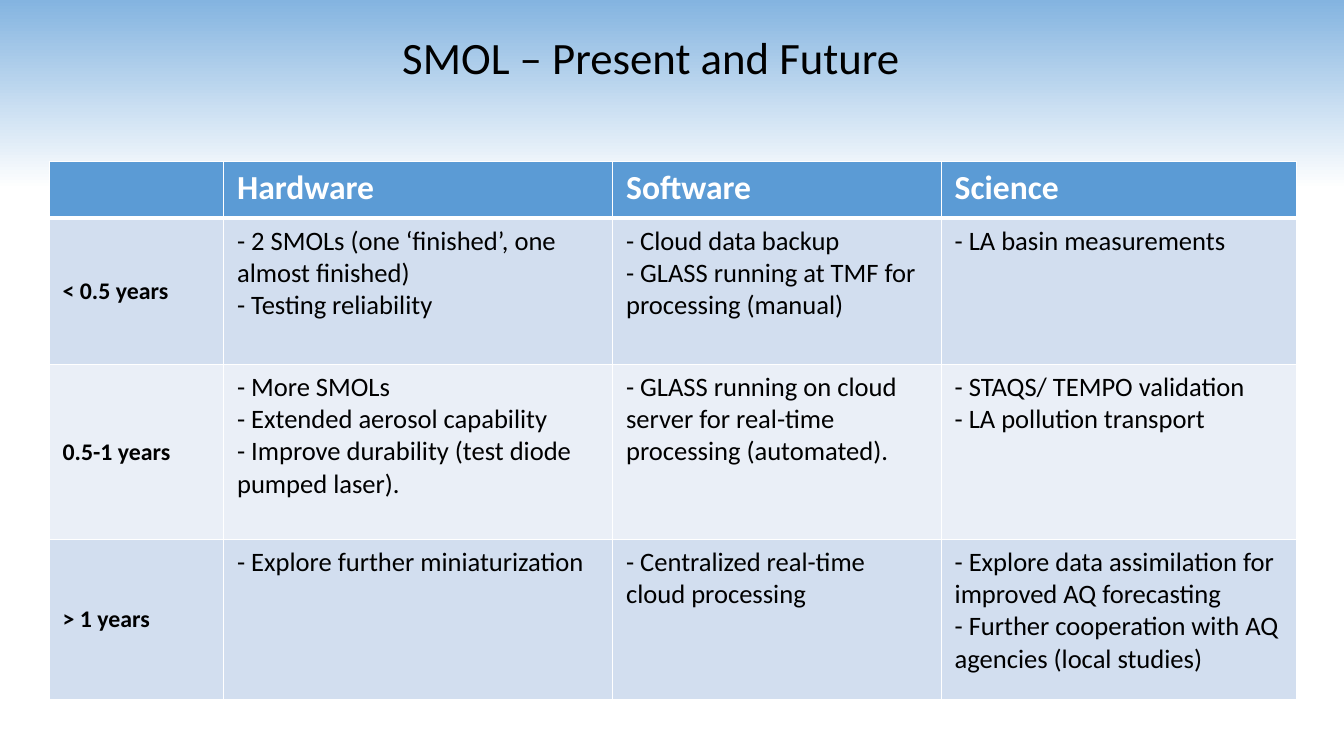
import pptx
import pptx.dml.color
import pptx.enum.text
import pptx.oxml
import pptx.oxml.ns
import pptx.util

Pt = pptx.util.Pt
RGBColor = pptx.dml.color.RGBColor
Align = pptx.enum.text.PP_ALIGN
Anchor = pptx.enum.text.MSO_ANCHOR

WHITE = RGBColor(0xFF, 0xFF, 0xFF)
BLACK = RGBColor(0x00, 0x00, 0x00)
SKY = RGBColor(0x84, 0xB4, 0xE0)
HEADER_BLUE = RGBColor(0x5B, 0x9B, 0xD5)
BANDS = [RGBColor(0xD2, 0xDE, 0xEF), RGBColor(0xEA, 0xEF, 0xF7)]

COLUMN_WIDTHS = [124.6, 277.9, 234.7, 253.4]
ROW_HEIGHTS = [40.7, 104.4, 125, 114.2]
ROADMAP = [
    ["", "Hardware", "Software", "Science"],
    ["< 0.5 years",
     "- 2 SMOLs (one ‘finished’, one almost finished)\n- Testing reliability",
     "- Cloud data backup\n- GLASS running at TMF for processing (manual)",
     "- LA basin measurements"],
    ["0.5-1 years",
     "- More SMOLs\n- Extended aerosol capability\n"
     "- Improve durability (test diode pumped laser).",
     "- GLASS running on cloud server for real-time processing (automated).",
     "- STAQS/ TEMPO validation\n- LA pollution transport"],
    ["> 1 years",
     "- Explore further miniaturization",
     "- Centralized real-time cloud processing",
     "- Explore data assimilation for improved AQ forecasting\n"
     "- Further cooperation with AQ agencies (local studies)"],
]


class SlideBuilder:
    font_name = "Calibri"

    def __init__(self, slide):
        self.slide = slide

    def background(self, lower, upper, fade_start):
        fill = self.slide.background.fill
        fill.gradient()
        fill.gradient_angle = 90
        stops = zip(fill.gradient_stops, (lower, upper), (fade_start, 1))
        for stop, color, position in stops:
            stop.color.rgb = color
            stop.position = position

    def format_text(self, text_frame, size, color, bold=False):
        for paragraph in text_frame.paragraphs:
            for run in paragraph.runs:
                run.font.name = self.font_name
                run.font.size = Pt(size)
                run.font.bold = bold
                run.font.color.rgb = color

    def title(self, text, left, top, width, height):
        shape = self.slide.shapes.add_textbox(Pt(left), Pt(top), Pt(width), Pt(height))
        text_frame = shape.text_frame
        text_frame.word_wrap = True
        text_frame.vertical_anchor = Anchor.MIDDLE
        text_frame.text = text
        paragraph = text_frame.paragraphs[0]
        paragraph.alignment = Align.CENTER
        paragraph.line_spacing = 0.9
        self.format_text(text_frame, 32, BLACK)

    def borders(self, cell, bottom_width):
        properties = cell._tc.get_or_add_tcPr()
        widths = {"lnL": 1, "lnR": 1, "lnT": 1, "lnB": bottom_width}
        for index, (side, width) in enumerate(widths.items()):
            line = pptx.oxml.parse_xml(
                f'<a:{side} {pptx.oxml.ns.nsdecls("a")} w="{Pt(width)}">'
                f'<a:solidFill><a:srgbClr val="{WHITE}"/></a:solidFill></a:{side}>')
            properties.insert(index, line)

    def cell(self, cell, text, fill, size, color, bold, anchor, bottom_width):
        cell.fill.solid()
        cell.fill.fore_color.rgb = fill
        cell.margin_left = cell.margin_right = Pt(9.5)
        cell.margin_top = cell.margin_bottom = Pt(4.8)
        cell.vertical_anchor = anchor
        cell.text_frame.text = text
        self.format_text(cell.text_frame, size, color, bold)
        self.borders(cell, bottom_width)

    def table(self, rows, left, top, widths, heights):
        table = self.slide.shapes.add_table(
            len(rows), len(widths), Pt(left), Pt(top),
            Pt(sum(widths)), Pt(sum(heights))).table
        for column, width in zip(table.columns, widths):
            column.width = Pt(width)
        for row, height in zip(table.rows, heights):
            row.height = Pt(height)
        for r, texts in enumerate(rows):
            for c, text in enumerate(texts):
                if r == 0:
                    style = (HEADER_BLUE, 24, WHITE, True, Anchor.TOP, 3)
                elif c == 0:
                    style = (BANDS[(r - 1) % 2], 17, BLACK, True, Anchor.MIDDLE, 1)
                else:
                    style = (BANDS[(r - 1) % 2], 19, BLACK, False, Anchor.TOP, 1)
                if r == 1:
                    # The header rule is shared with the first body row
                    self.cell(table.cell(r, c), text, *style)
                    top_line = table.cell(r, c)._tc.tcPr.find(pptx.oxml.ns.qn("a:lnT"))
                    top_line.set("w", str(Pt(3)))
                else:
                    self.cell(table.cell(r, c), text, *style)


def main():
    presentation = pptx.Presentation()
    presentation.slide_width = Pt(960)
    presentation.slide_height = Pt(540)
    builder = SlideBuilder(presentation.slides.add_slide(presentation.slide_layouts[6]))

    # Sky fading to white over the top quarter
    builder.background(WHITE, SKY, 0.75)

    # Title and roadmap table
    builder.title("SMOL – Present and Future", 100.8, 13, 728.6, 59.8)
    builder.table(ROADMAP, 35.3, 115.2, COLUMN_WIDTHS, ROW_HEIGHTS)

    presentation.save("out.pptx")


if __name__ == "__main__":
    main()
